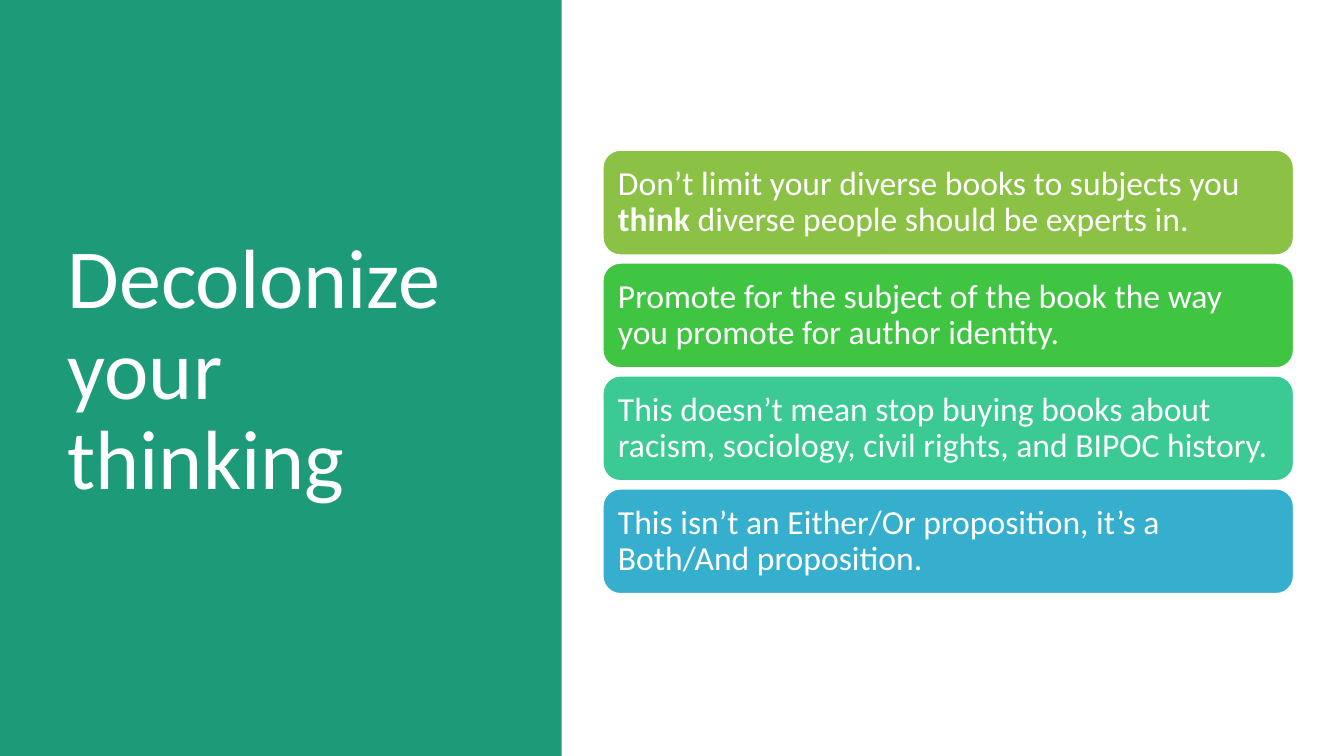
from pptx import Presentation
from pptx.dml.color import RGBColor
from pptx.enum.shapes import MSO_SHAPE
from pptx.enum.text import MSO_ANCHOR, MSO_AUTO_SIZE, PP_ALIGN
from pptx.util import Inches, Pt

RECT, ROUND = MSO_SHAPE.RECTANGLE, MSO_SHAPE.ROUNDED_RECTANGLE
MIDDLE, LEFT, FIXED = MSO_ANCHOR.MIDDLE, PP_ALIGN.LEFT, MSO_AUTO_SIZE.NONE

THEME = {
    "font": "Calibri",
    "white": "FFFFFF",
    "panel": "1D9A78",
    "cards": ["8BC145", "40C543", "3BCA93", "36AFCE"],
    "title": 60,
    "body": 24,
}

POINTS = [
    "Don’t limit your diverse books to subjects you *think* diverse people should be experts in.",
    "Promote for the subject of the book the way you promote for author identity.",
    "This doesn’t mean stop buying books about racism, sociology, civil rights, and BIPOC history.",
    "This isn’t an Either/Or proposition, it’s a Both/And proposition.",
]


def write(shape, text, size, color=THEME["white"], inset=0.1):
    """Fill a shape with one paragraph; words between asterisks are bold."""
    frame = shape.text_frame
    frame.word_wrap = True
    frame.auto_size = FIXED
    frame.vertical_anchor = MIDDLE
    frame.margin_left = frame.margin_right = Inches(inset)
    frame.margin_top = frame.margin_bottom = Inches(inset)
    para = frame.paragraphs[0]
    para.alignment = LEFT
    para.line_spacing = 0.9
    for i, part in enumerate(text.split("*")):
        run = para.add_run()
        run.text = part
        run.font.name = THEME["font"]
        run.font.size = Pt(size)
        run.font.bold = i % 2 == 1
        run.font.color.rgb = RGBColor.from_string(color)


def block(kind, left, top, width, height, fill, line=None):
    shape = slide.shapes.add_shape(
        kind, Inches(left), Inches(top), Inches(width), Inches(height))
    shape.shadow.inherit = False
    shape.fill.solid()
    shape.fill.fore_color.rgb = RGBColor.from_string(fill)
    if line:
        shape.line.color.rgb = RGBColor.from_string(line)
        shape.line.width = Pt(1)
    else:
        shape.line.fill.background()
    return shape


deck = Presentation()
deck.slide_width, deck.slide_height = Inches(13.33), Inches(7.5)
slide = deck.slides.add_slide(deck.slide_layouts[5])

# Title on the green side panel
panel = block(RECT, 0, 0, 5.57, 7.5, THEME["panel"])
title = slide.shapes.title
title.element.addprevious(panel.element)
title.left, title.top = Inches(0.57), Inches(0.68)
title.width, title.height = Inches(4.16), Inches(6.02)
write(title, "Decolonize your thinking", THEME["title"])

# Stack of cards
TOP, STEP = 1.49, 1.12
for row, (text, fill) in enumerate(zip(POINTS, THEME["cards"])):
    card = block(ROUND, 5.98, TOP + row * STEP, 6.85, 1.04, fill, line=THEME["white"])
    write(card, text, THEME["body"])

deck.save("out.pptx")
